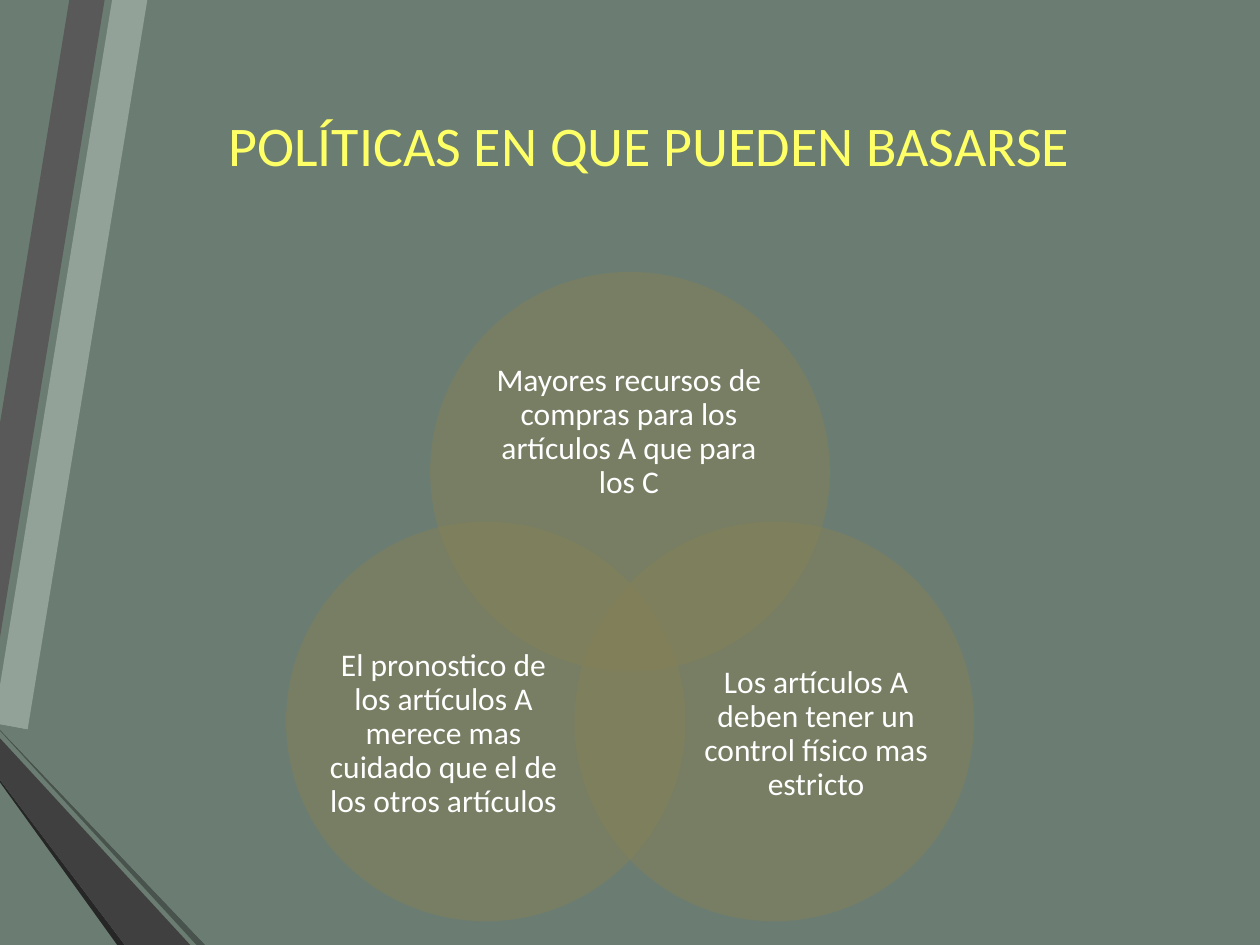
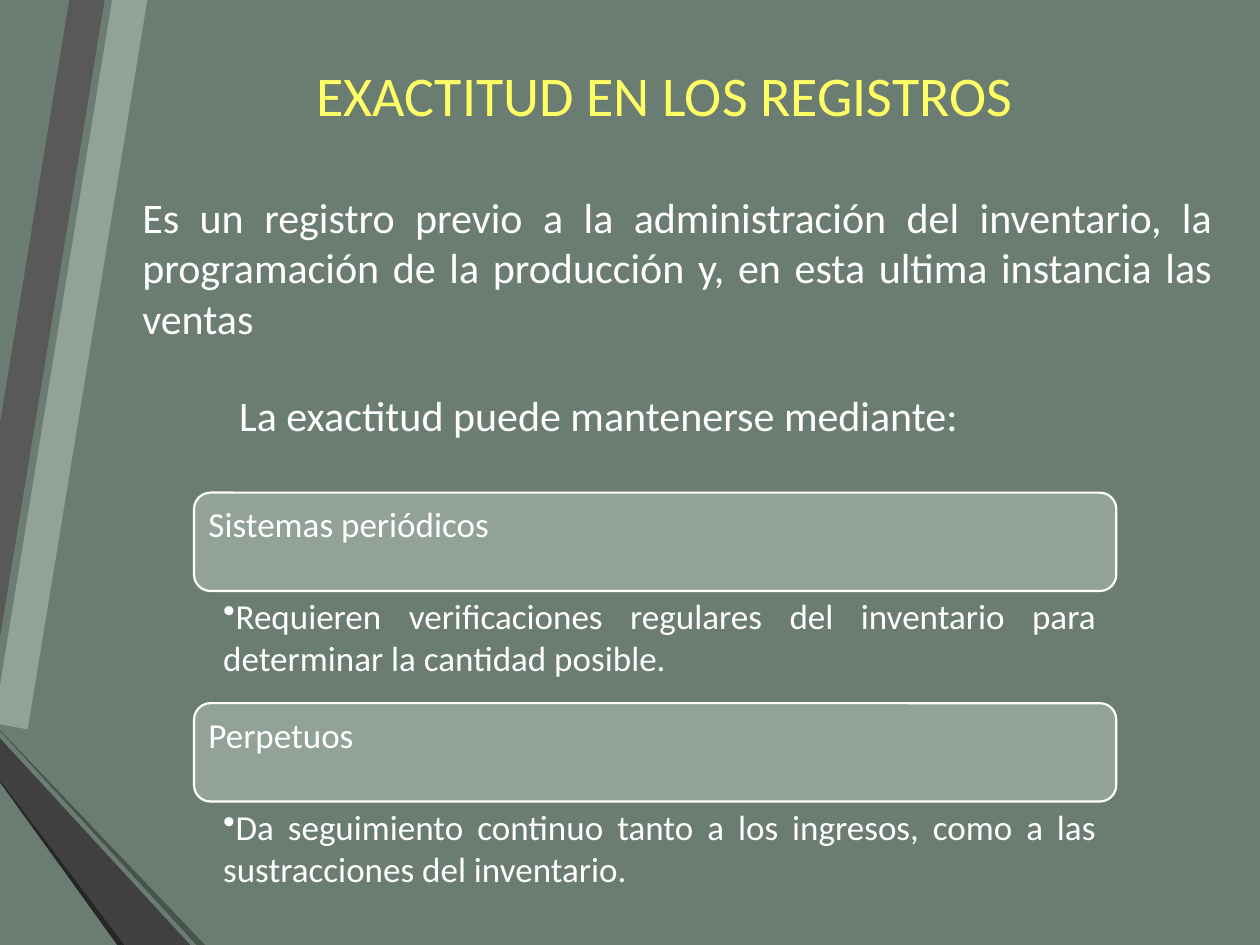
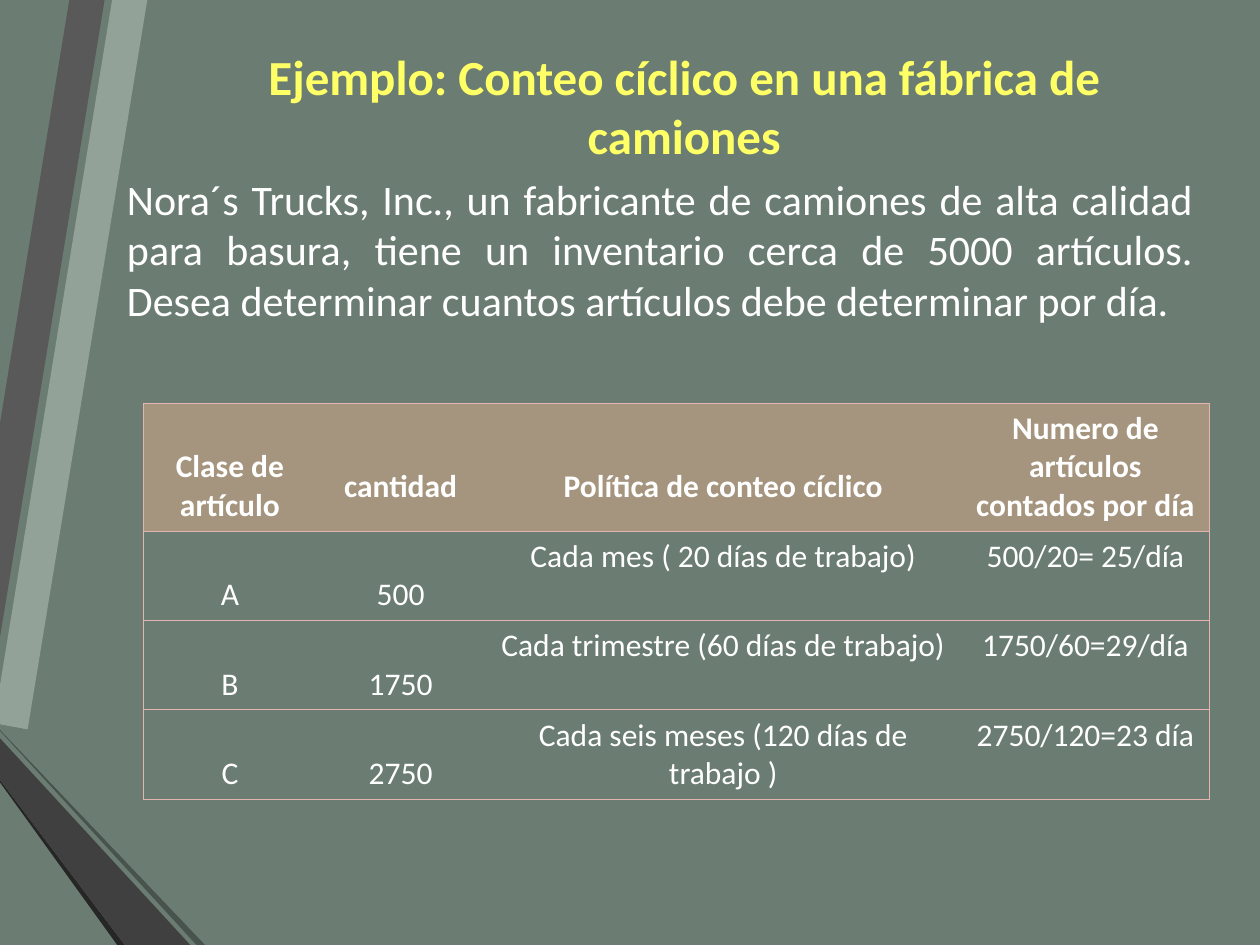
import math

import lxml.etree
import pptx
import pptx.dml.color
import pptx.enum.shapes
import pptx.enum.text
import pptx.oxml.ns
import pptx.util

Pt = pptx.util.Pt
qn = pptx.oxml.ns.qn
ALIGN = pptx.enum.text.PP_ALIGN
ANCHOR = pptx.enum.text.MSO_ANCHOR
SHAPE = pptx.enum.shapes.MSO_SHAPE

FONT = "Calibri"
COLORS = {
    "background": "6B7D72",
    "title": "FFFF66",
    "text": "FFFFFF",
    "sage": "93A299",
    "gray": "595959",
    "black": "262626",
    "moss": "47534C",
    "charcoal": "404040",
    "circle": "848058",
    "table_head": "A5957E",
    "table_line": "E4B4B0",
}

# Ribbons at the left edge: colour and corner points
RIBBONS = [
    ("sage", [(0, 391.7), (0, 414), (15.8, 416.9), (84.2, 0), (64.1, 0)]),
    ("gray", [(59.8, 0), (39.6, 0), (0, 241.9), (0, 364.3)]),
    ("black", [(0, 445.7), (0, 447.1), (67, 540), (71.3, 540)]),
    ("moss", [(0, 416.9), (0, 417.6), (112.3, 540), (117.4, 540)]),
    ("background", [(0, 416.9), (117.4, 540), (167.8, 540), (15.8, 416.9), (0, 414)]),
    ("charcoal", [(0, 445.7), (71.3, 540), (108.7, 540), (0, 421.9)]),
]

# Policies: angle of the circle, text, text box relative to the circle
POLICIES = [
    (-90, "Mayores recursos de compras para los artículos A que para los C",
     (30.1, 40.3, 167, 102.2)),
    (30, "Los artículos A deben tener un control físico mas estricto",
     (69.8, 59, 136.8, 125.3)),
    (150, "El pronostico de los artículos A merece mas cuidado que el de los otros artículos",
     (21.6, 59, 136.8, 125.3)),
]

SYSTEMS = [
    ("Sistemas periódicos",
     "Requieren verificaciones regulares del inventario para determinar la cantidad posible."),
    ("Perpetuos",
     "Da seguimiento continuo tanto a los ingresos, como a las sustracciones del inventario."),
]

COUNT_HEAD = ["Clase de artículo", "cantidad", "Política de conteo cíclico",
              "Numero de artículos contados por día"]
COUNT_ROWS = [
    ["A", "500", "Cada mes ( 20 días de trabajo)", "500/20= 25/día"],
    ["B", "1750", "Cada trimestre (60 días de trabajo)", "1750/60=29/día"],
    ["C", "2750", "Cada seis meses (120 días de trabajo )", "2750/120=23 día"],
]
COUNT_WIDTHS = [98.6, 96.5, 272.2, 141.8]


def rgb(color):
    return pptx.dml.color.RGBColor.from_string(COLORS[color])


def box(*lengths):
    return [Pt(length) for length in lengths]


def paint(shape, color, line=None):
    shape.shadow.inherit = False
    shape.fill.solid()
    shape.fill.fore_color.rgb = rgb(color)
    if line:
        shape.line.color.rgb = rgb(line)
        shape.line.width = Pt(1.25)
    else:
        shape.line.fill.background()


def write(frame, text, size, color="text", align=ALIGN.LEFT, bold=False, spacing=None):
    frame.text = text
    paragraph = frame.paragraphs[0]
    paragraph.alignment = align
    paragraph.line_spacing = spacing
    font = paragraph.font
    font.name, font.size, font.bold = FONT, Pt(size), bold
    font.color.rgb = rgb(color)
    return paragraph


def set_margins(frame, left, top, right, bottom):
    frame.margin_left, frame.margin_top = Pt(left), Pt(top)
    frame.margin_right, frame.margin_bottom = Pt(right), Pt(bottom)


def add_text(slide, place, text, size, margins=None, anchor=ANCHOR.TOP, **style):
    frame = slide.shapes.add_textbox(*box(*place)).text_frame
    frame.word_wrap = True
    frame.vertical_anchor = anchor
    if margins:
        set_margins(frame, *margins)
    return write(frame, text, size, **style)


def add_titled_slide(deck, layout, place, text, size=32, bold=False):
    slide = deck.slides.add_slide(layout)
    title = slide.shapes.title
    title.left, title.top, title.width, title.height = box(*place)
    frame = title.text_frame
    frame.word_wrap = True
    frame.auto_size = pptx.enum.text.MSO_AUTO_SIZE.NONE
    frame.vertical_anchor = ANCHOR.MIDDLE
    write(frame, text, size, "title", ALIGN.CENTER, bold)
    return slide


def decorate_layout(layout, slide):
    """Put the background and the ribbons on the layout; the slide lends its freeform builder."""
    layout.background.fill.solid()
    layout.background.fill.fore_color.rgb = rgb("background")
    for number, (color, corners) in enumerate(RIBBONS):
        start, *rest = [box(*corner) for corner in corners]
        builder = slide.shapes.build_freeform(*start)
        builder.add_line_segments(rest, close=True)
        ribbon = builder.convert_to_shape()
        paint(ribbon, color)
        ribbon.element.nvSpPr.cNvPr.set("id", str(100 + number))
        layout.shapes.element.append(ribbon.element)


def add_policy_circle(slide, angle, text, text_place):
    diameter, spread, center_x, center_y = 228.4, 95.1, 360, 364.7
    left = center_x + spread * math.cos(math.radians(angle)) - diameter / 2
    top = center_y + spread * math.sin(math.radians(angle)) - diameter / 2
    circle = slide.shapes.add_shape(SHAPE.OVAL, *box(left, top, diameter, diameter))
    paint(circle, "circle")
    fill_color = circle.element.spPr.find(".//" + qn("a:srgbClr"))
    lxml.etree.SubElement(fill_color, qn("a:alpha"), val="50000")
    dx, dy, width, height = text_place
    add_text(slide, (left + dx, top + dy, width, height), text, 18, margins=(0, 0, 0, 0),
             anchor=ANCHOR.MIDDLE, align=ALIGN.CENTER, spacing=0.9)


def add_system(slide, top, name, description):
    left, width, bar_height = 110.9, 527, 56.2
    bar = slide.shapes.add_shape(SHAPE.ROUNDED_RECTANGLE, *box(left, top, width, bar_height))
    paint(bar, "sage", line="text")
    bar.text_frame.vertical_anchor = ANCHOR.TOP
    set_margins(bar.text_frame, 5.5, 3, 5.5, 3)
    write(bar.text_frame, name, 20)
    paragraph = add_text(slide, (left, top + bar_height, width, 64.1), description, 20,
                         margins=(16.6, 2, 11.5, 2), align=ALIGN.JUSTIFY)
    # Bullet without a hanging indent
    properties = paragraph._p.get_or_add_pPr()
    properties.set("marL", "0")
    properties.set("indent", "0")
    lxml.etree.SubElement(properties, qn("a:buChar"), char="•")
    properties.append(properties.find(qn("a:defRPr")))


def set_borders(cell, sides):
    properties = cell._tc.get_or_add_tcPr()
    for side in "LRTB":
        line = lxml.etree.SubElement(properties, qn("a:ln" + side), w=str(Pt(0.75)))
        if side in sides:
            fill = lxml.etree.SubElement(line, qn("a:solidFill"))
            lxml.etree.SubElement(fill, qn("a:srgbClr"), val=COLORS["table_line"])
        else:
            lxml.etree.SubElement(line, qn("a:noFill"))


def add_count_table(slide, left, top):
    rows = [COUNT_HEAD] + COUNT_ROWS
    heights = [73.1] + [51.1] * len(COUNT_ROWS)
    table = slide.shapes.add_table(
        len(rows), len(COUNT_HEAD), *box(left, top, sum(COUNT_WIDTHS), sum(heights))).table
    for column, width in zip(table.columns, COUNT_WIDTHS):
        column.width = Pt(width)
    for row, height in zip(table.rows, heights):
        row.height = Pt(height)
    head_spacing = [None, 2.5, 2.5, None]
    body_spacing = [2.0, 2.0, None, None]
    last = len(COUNT_HEAD) - 1
    for r, texts in enumerate(rows):
        spacings = body_spacing if r else head_spacing
        for c, text in enumerate(texts):
            cell = table.cell(r, c)
            set_borders(cell, "TB" + {0: "L", last: "R"}.get(c, ""))
            if r == 0:
                cell.fill.solid()
                cell.fill.fore_color.rgb = rgb("table_head")
            else:
                cell.fill.background()
            write(cell.text_frame, text, 18, align=ALIGN.CENTER, bold=r == 0,
                  spacing=spacings[c])
    table.cell(0, 0).vertical_anchor = ANCHOR.BOTTOM


def main():
    deck = pptx.Presentation()
    deck.slide_width, deck.slide_height = box(720, 540)
    layout = deck.slide_layouts[5]

    # Policies
    policies = add_titled_slide(deck, layout, (115.9, 31.7, 510.5, 101.5),
                                "POLÍTICAS EN QUE PUEDEN BASARSE")
    decorate_layout(layout, policies)
    for policy in POLICIES:
        add_policy_circle(policies, *policy)

    # Record accuracy
    accuracy = add_titled_slide(deck, layout, (76.3, 7.2, 607, 92.9),
                                "EXACTITUD EN LOS REGISTROS")
    add_text(accuracy, (129.6, 218.9, 473.8, 36), "La exactitud puede mantenerse mediante:", 24)
    add_text(accuracy, (74.2, 105.8, 625.7, 94.3),
             "Es un registro previo a la administración del inventario, la programación de la "
             "producción y, en esta ultima instancia las ventas", 24, align=ALIGN.JUSTIFY)
    for number, system in enumerate(SYSTEMS):
        add_system(accuracy, 281.5 + 120.3 * number, *system)

    # Cycle counting example
    example = add_titled_slide(deck, layout, (115.9, 9.4, 550.1, 101.5),
                               "Ejemplo: Conteo cíclico en una fábrica de camiones", 28, True)
    add_text(example, (65.5, 95.5, 623.5, 141.8),
             "Nora´s Trucks, Inc., un fabricante de camiones de alta calidad para basura, tiene un "
             "inventario cerca de 5000 artículos. Desea determinar cuantos artículos debe "
             "determinar por día.", 24, align=ALIGN.JUSTIFY)
    add_count_table(example, 82.1, 230.4)

    deck.save("out.pptx")


if __name__ == "__main__":
    main()
